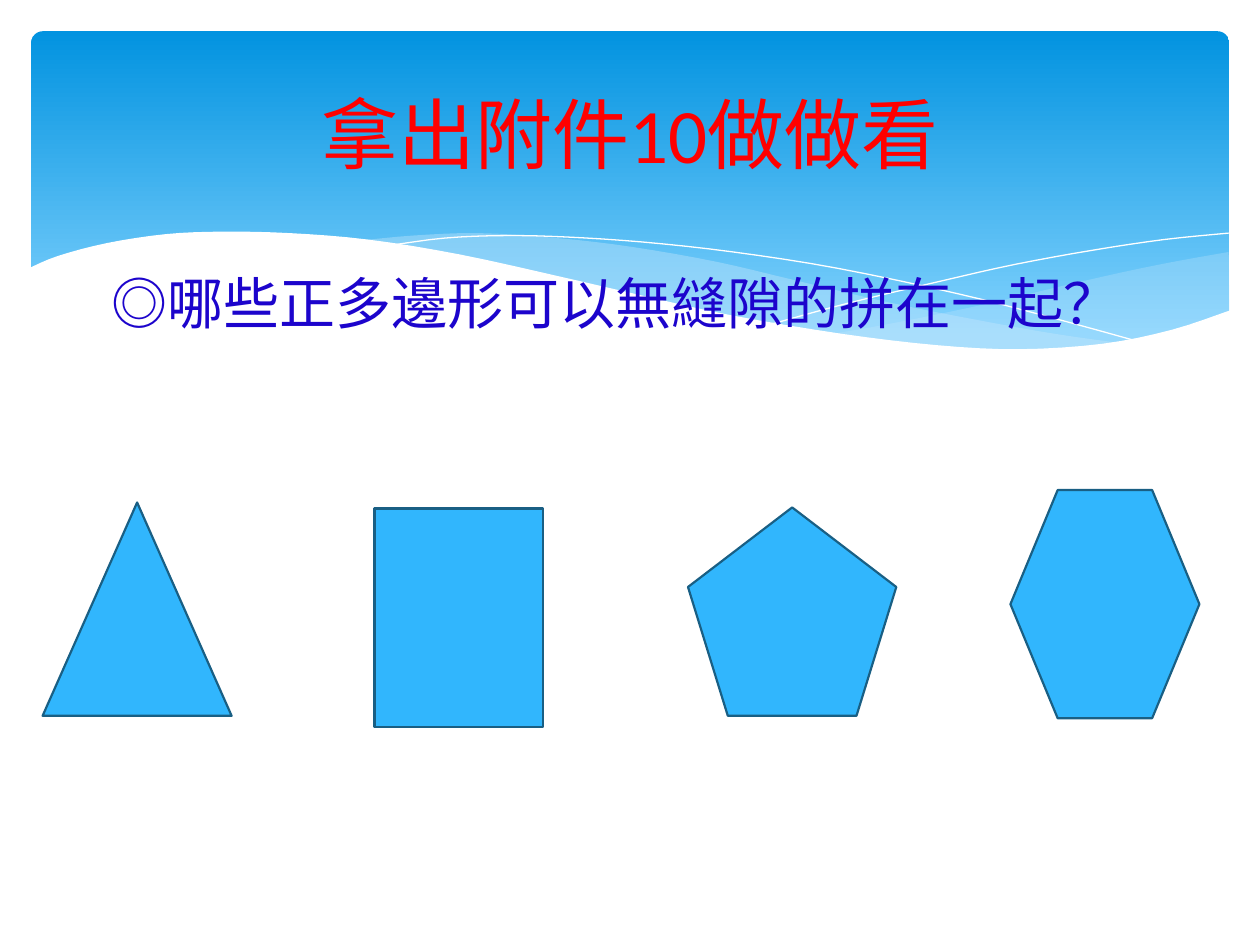
import pptx
import pptx.dml.color
import pptx.enum.shapes
import pptx.enum.text
import pptx.oxml
import pptx.oxml.ns
import pptx.util
from pptx.util import Cm

SHAPE = pptx.enum.shapes.MSO_SHAPE
COLORS = {
    "band_top": "0293E0", "band_bottom": "83D3FE", "wave": "C6E7FC",
    "white": "FFFFFF", "polygon": "31B6FD", "outline": "195F84",
    "title": "FF0000", "question": "1C04CC",
}

# Curve points in centimetres
RIGHT_TOP = [(24.77, 5.08), (23.39, 5.33), (21.87, 5.66), (19.79, 6.15),
             (17.93, 6.53), (16.79, 6.73)]
RIGHT_BOTTOM = [(16.79, 6.73), (17.91, 6.88), (19.23, 7.01), (20.68, 7.06),
                (21.92, 6.99), (22.99, 6.83), (23.93, 6.58), (24.79, 6.27)]
LEFT_TOP = [(7.26, 4.85), (8.33, 4.75), (9.65, 4.7), (11.23, 4.8),
            (12.75, 4.98), (14.45, 5.28), (15.98, 5.64), (17.93, 6.1),
            (19.69, 6.45), (21.26, 6.73), (22.68, 6.93)]
LEFT_BOTTOM = [(22.68, 6.93), (21.77, 7.04), (20.5, 7.06), (19, 7.01),
               (17.27, 6.81), (15.27, 6.48), (13.46, 6.1), (11.4, 5.64),
               (9.73, 5.26), (8.2, 4.98), (7.26, 4.85)]
FALLING_LINE = [(7.85, 4.95), (8.97, 4.8), (10.19, 4.75), (11.43, 4.78),
                (12.95, 4.88), (14.78, 5.08), (16.89, 5.41), (19.3, 5.92),
                (21.11, 6.38), (23.04, 6.91)]
RISING_LINE = [(15.57, 6.53), (17.07, 6.12), (19, 5.66), (20.47, 5.33),
               (22, 5.05), (23.47, 4.83), (24.77, 4.7)]
PAPER_EDGE = [(24.82, 6.25), (23.62, 6.65), (22.23, 6.93), (20.55, 7.04),
              (18.9, 6.96), (16.97, 6.73), (14.71, 6.35), (12.78, 5.92),
              (11.35, 5.59), (9.27, 5.13), (7.42, 4.83), (5.84, 4.7),
              (4.5, 4.67), (3.35, 4.72), (2.16, 4.9), (1.17, 5.16),
              (0.58, 5.41)]
PAPER_CORNERS = [(0.58, 8.36), (24.82, 8.36)]

POLYGONS = [
    (SHAPE.HEXAGON, 20.37, 9.88, 3.81, 4.6),
    (SHAPE.ISOSCELES_TRIANGLE, 0.86, 10.13, 3.81, 4.3),
    (SHAPE.RECTANGLE, 7.55, 10.25, 3.4, 4.4),
    (SHAPE.REGULAR_PENTAGON, 13.87, 10.23, 4.2, 4.2),
]


def smooth(points, steps=4):
    """Return a Catmull-Rom curve through the points."""
    padded = [points[0], *points, points[-1]]
    curve = [points[0]]
    for a, b, c, d in zip(padded, padded[1:], padded[2:], padded[3:]):
        for step in range(1, steps + 1):
            t = step / steps
            curve.append(tuple(
                (2 * q + (r - p) * t + (2 * p - 5 * q + 4 * r - s) * t ** 2
                 + (3 * q - p - 3 * r + s) * t ** 3) / 2
                for p, q, r, s in zip(a, b, c, d)))
    return curve


def rgb(name):
    return pptx.dml.color.RGBColor.from_string(COLORS[name])


class PolygonSlide:
    def __init__(self, slide):
        self.slide = slide
        self.latin_font = "Calibri"
        self.chinese_font = "Noto Sans CJK SC"
        self.outline_width = pptx.util.Pt(1.25)

    def band(self, left, top, width, height):
        band = self.slide.shapes.add_shape(
            SHAPE.ROUNDED_RECTANGLE, Cm(left), Cm(top), Cm(width), Cm(height))
        band.shadow.inherit = False
        band.adjustments[0] = 0.034
        band.line.fill.background()
        band.fill.gradient()
        band.fill.gradient_angle = 270
        stops = band.fill.gradient_stops
        for stop, position, color in zip(stops, (0, 0.9), ("band_top", "band_bottom")):
            stop.position = position
            stop.color.rgb = rgb(color)

    def curve(self, points, closed):
        (x, y), *rest = [(Cm(x), Cm(y)) for x, y in points]
        builder = self.slide.shapes.build_freeform(x, y)
        builder.add_line_segments(rest, close=closed)
        curve = builder.convert_to_shape()
        curve.shadow.inherit = False
        return curve

    def wave(self, points, color, opacity=100):
        wave = self.curve(points, closed=True)
        wave.line.fill.background()
        wave.fill.solid()
        wave.fill.fore_color.rgb = rgb(color)
        if opacity < 100:
            srgb = wave.element.spPr.find(".//" + pptx.oxml.ns.qn("a:srgbClr"))
            alpha = srgb.makeelement(pptx.oxml.ns.qn("a:alpha"), {"val": str(opacity * 1000)})
            srgb.append(alpha)

    def hairline(self, points):
        hairline = self.curve(smooth(points), closed=False)
        hairline.fill.background()
        hairline.line.color.rgb = rgb("white")
        hairline.line.width = 0

    def polygon(self, kind, left, top, width, height):
        polygon = self.slide.shapes.add_shape(
            kind, Cm(left), Cm(top), Cm(width), Cm(height))
        polygon.shadow.inherit = False
        polygon.fill.solid()
        polygon.fill.fore_color.rgb = rgb("polygon")
        polygon.line.color.rgb = rgb("outline")
        polygon.line.width = self.outline_width

    def set_text(self, holder, text, size, color, latin_font):
        frame = holder.text_frame
        frame.word_wrap = True
        frame.vertical_anchor = pptx.enum.text.MSO_ANCHOR.MIDDLE
        paragraph = frame.paragraphs[0]
        paragraph.text = text
        paragraph.alignment = pptx.enum.text.PP_ALIGN.CENTER
        font = paragraph.font
        font.size = pptx.util.Pt(size)
        font.color.rgb = rgb(color)
        font.name = latin_font
        latin = holder.element.find(".//" + pptx.oxml.ns.qn("a:latin"))
        latin.addnext(latin.makeelement(
            pptx.oxml.ns.qn("a:ea"), {"typeface": self.chinese_font}))

    def title(self, text, left, top, width, height):
        title = self.slide.shapes.title
        title.left, title.top = Cm(left), Cm(top)
        title.width, title.height = Cm(width), Cm(height)
        self.set_text(title, text, 44, "title", self.latin_font)
        self.slide.shapes.element.append(title.element)  # in front of the band

    def question(self, text, left, top, width, height):
        question = self.slide.shapes.add_textbox(
            Cm(left), Cm(top), Cm(width), Cm(height))
        self.set_text(question, text, 32, "question", self.chinese_font)


def main():
    deck = pptx.Presentation()
    deck.slide_width, deck.slide_height = Cm(25.4), Cm(19.05)
    page = PolygonSlide(deck.slides.add_slide(deck.slide_layouts[5]))

    page.band(0.63, 0.63, 24.15, 6.86)
    page.wave(smooth(RIGHT_TOP) + smooth(RIGHT_BOTTOM), "wave", 29)
    page.wave(smooth(LEFT_TOP) + smooth(LEFT_BOTTOM), "wave", 40)
    page.hairline(FALLING_LINE)
    page.hairline(RISING_LINE)
    page.wave(smooth(PAPER_EDGE) + PAPER_CORNERS, "white")

    page.question("◎哪些正多邊形可以無縫隙的拼在一起？", 1.32, 4.78, 22.2, 2.62)
    page.title("拿出附件10做做看", 1.27, 0.94, 22.86, 3.48)
    for polygon in POLYGONS:
        page.polygon(*polygon)

    deck.save("out.pptx")


if __name__ == "__main__":
    main()
